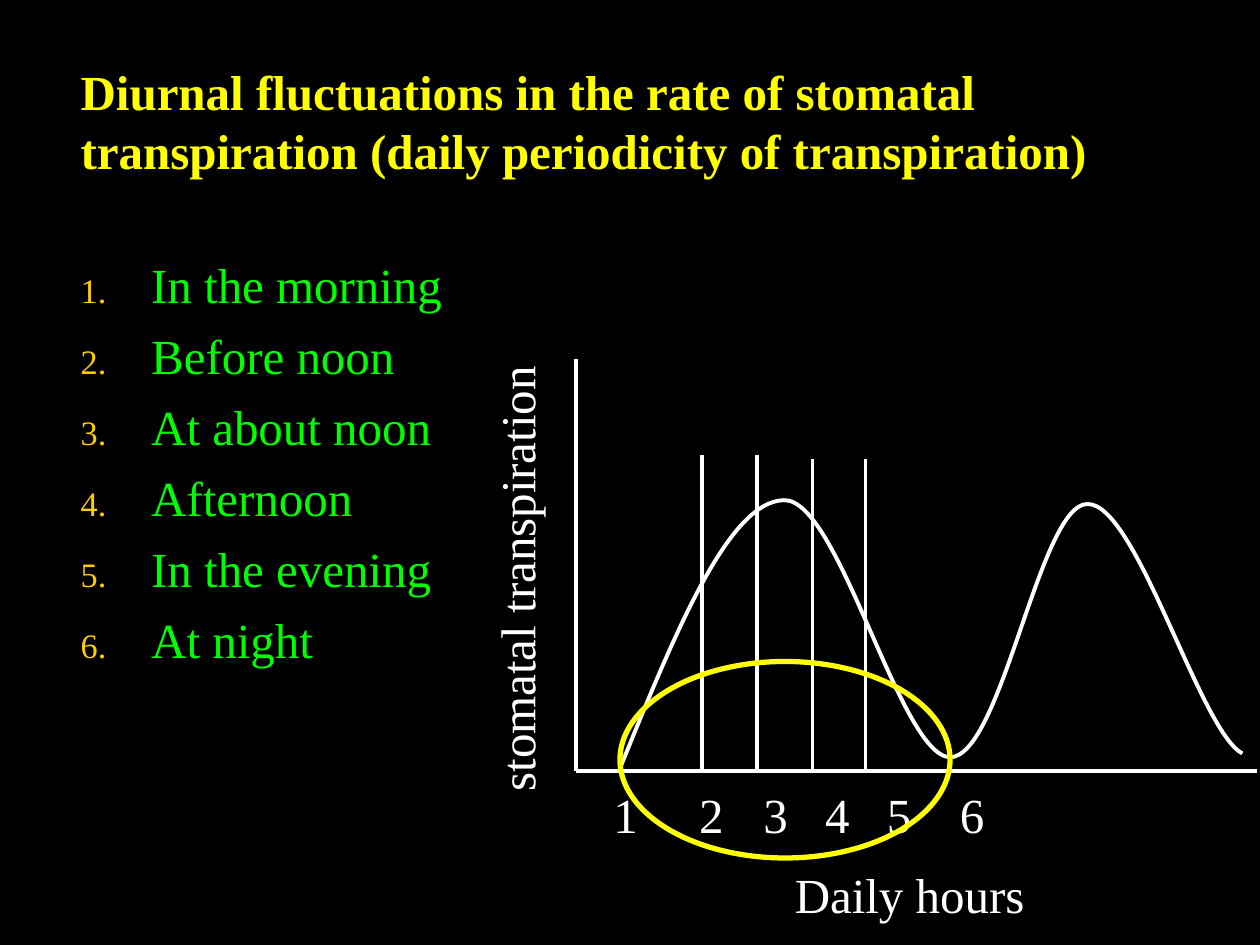
from lxml import etree
from pptx import Presentation
from pptx.dml.color import RGBColor
from pptx.enum.shapes import MSO_CONNECTOR, MSO_SHAPE
from pptx.enum.text import MSO_ANCHOR, MSO_AUTO_SIZE, PP_ALIGN
from pptx.oxml.ns import qn
from pptx.util import Inches, Pt

BLACK = RGBColor(0x00, 0x00, 0x00)
WHITE = RGBColor(0xFF, 0xFF, 0xFF)
YELLOW = RGBColor(0xFF, 0xFF, 0x00)
GREEN = RGBColor(0x00, 0xFF, 0x00)
GOLD = RGBColor(0xFF, 0xCC, 0x00)

STRAIGHT = MSO_CONNECTOR.STRAIGHT
ELLIPSE = MSO_SHAPE.OVAL
TOP = MSO_ANCHOR.TOP
LEFT = PP_ALIGN.LEFT
NO_AUTOFIT = MSO_AUTO_SIZE.NONE

TITLE = ("Diurnal fluctuations in the rate of stomatal transpiration "
         "(daily periodicity of transpiration)")
TIMES_OF_DAY = ["In the morning", "Before noon", "At about noon",
                "Afternoon", "In the evening", "At night"]
HOUR_TABS = [0.68, 1.19, 1.68, 2.17, 2.75]

# Start point, then two control points and an end point for each segment
CURVE = [(4.92, 6.1),
         (5.35, 5.04), (5.78, 3.98), (6.22, 3.97),
         (6.66, 3.95), (7.14, 6), (7.54, 6.01),
         (7.95, 6.01), (8.25, 4), (8.63, 4),
         (9.02, 3.99), (9.52, 5.8), (9.86, 5.98)]


class SlideBuilder:
    """Holds the text style and the current slide."""

    font = "Times New Roman"
    size = Pt(28)
    indent = Inches(0.56)

    def __init__(self, slide):
        self.slide = slide
        slide.background.fill.solid()
        slide.background.fill.fore_color.rgb = BLACK

    def add_run(self, paragraph, text, color, bold=False):
        run = paragraph.add_run()
        run.text = text
        run.font.name = self.font
        run.font.size = self.size
        run.font.bold = bold
        run.font.color.rgb = color

    def place(self, shape, left, top, width, height):
        shape.left, shape.top = Inches(left), Inches(top)
        shape.width, shape.height = Inches(width), Inches(height)
        frame = shape.text_frame
        frame.word_wrap = True
        frame.auto_size = NO_AUTOFIT
        frame.vertical_anchor = TOP
        return frame

    def title(self, text, *box):
        frame = self.place(self.slide.shapes.title, *box)
        paragraph = frame.paragraphs[0]
        paragraph.alignment = LEFT
        self.add_run(paragraph, text, YELLOW, bold=True)

    def numbered_list(self, items, *box):
        frame = self.place(self.slide.placeholders[1], *box)
        for index, item in enumerate(items):
            paragraph = frame.add_paragraph() if index else frame.paragraphs[0]
            paragraph.space_before = Pt(7)
            self.add_run(paragraph, item, GREEN)
            self.number(paragraph)

    def number(self, paragraph):
        properties = paragraph._p.get_or_add_pPr()
        properties.set("marL", str(self.indent))
        properties.set("indent", str(-self.indent))
        color = etree.SubElement(properties, qn("a:buClr"))
        etree.SubElement(color, qn("a:srgbClr"), val=str(GOLD))
        etree.SubElement(properties, qn("a:buSzPct"), val="70000")
        etree.SubElement(properties, qn("a:buFont"), typeface=self.font)
        etree.SubElement(properties, qn("a:buAutoNum"), type="arabicPeriod")

    def label(self, text, *box, rotation=0, tabs=()):
        shape = self.slide.shapes.add_textbox(0, 0, 0, 0)
        shape.rotation = rotation
        paragraph = self.place(shape, *box).paragraphs[0]
        self.add_run(paragraph, text, WHITE)
        if tabs:
            properties = paragraph._p.get_or_add_pPr()
            tab_list = etree.SubElement(properties, qn("a:tabLst"))
            for position in tabs:
                etree.SubElement(tab_list, qn("a:tab"),
                                 pos=str(Inches(position)), algn="l")

    def line(self, x1, y1, x2, y2):
        connector = self.slide.shapes.add_connector(
            STRAIGHT, Inches(x1), Inches(y1), Inches(x2), Inches(y2))
        connector.line.color.rgb = WHITE
        connector.line.width = Pt(2)
        etree.SubElement(connector._element.spPr, qn("a:effectLst"))

    def outline(self, shape, color, width):
        shape.shadow.inherit = False
        shape.fill.background()
        shape.line.color.rgb = color
        shape.line.width = Pt(width)

    def curve(self, points):
        points = [(Inches(x), Inches(y)) for x, y in points]
        builder = self.slide.shapes.build_freeform(*points[0])
        builder.add_line_segments(points[1:], close=False)
        shape = builder.convert_to_shape()
        self.outline(shape, WHITE, 2.25)
        # Turn every three straight steps into one Bezier segment
        outline_path = next(shape._element.iter(qn("a:path")))
        steps = outline_path.findall(qn("a:lnTo"))
        for start in range(0, len(steps), 3):
            segment = etree.SubElement(outline_path, qn("a:cubicBezTo"))
            for step in steps[start:start + 3]:
                segment.append(step[0])
                outline_path.remove(step)

    def ellipse(self, left, top, width, height):
        shape = self.slide.shapes.add_shape(
            ELLIPSE, Inches(left), Inches(top), Inches(width), Inches(height))
        self.outline(shape, YELLOW, 3)


def main():
    presentation = Presentation()
    presentation.slide_width = Inches(10)
    presentation.slide_height = Inches(7.5)
    slide = presentation.slides.add_slide(presentation.slide_layouts[1])
    builder = SlideBuilder(slide)

    # Title and list
    builder.title(TITLE, 0.54, 0.44, 9.23, 1.1)
    builder.numbered_list(TIMES_OF_DAY, 0.54, 1.97, 4, 3.47)

    # Axes and their labels
    builder.line(4.57, 6.12, 9.98, 6.12)
    builder.line(4.57, 2.85, 4.57, 6.12)
    builder.label("Daily hours", 6.21, 6.81, 2.5, 0.57)
    builder.label("stomatal transpiration", 2.2, 4.2, 3.79, 0.57, rotation=270)

    # Transpiration curve and hour marks
    builder.curve(CURVE)
    builder.label("1\t2\t3\t4\t5\t6", 4.77, 6.18, 3.34, 0.57, tabs=HOUR_TABS)
    for x, top, bottom in [(5.57, 3.61, 6.1), (6.01, 3.61, 6.1),
                           (6.45, 3.64, 6.12), (6.87, 3.64, 6.12)]:
        builder.line(x, top, x, bottom)

    # Highlight of the first day
    builder.ellipse(4.92, 5.25, 2.62, 1.56)

    presentation.save("out.pptx")


if __name__ == "__main__":
    main()
